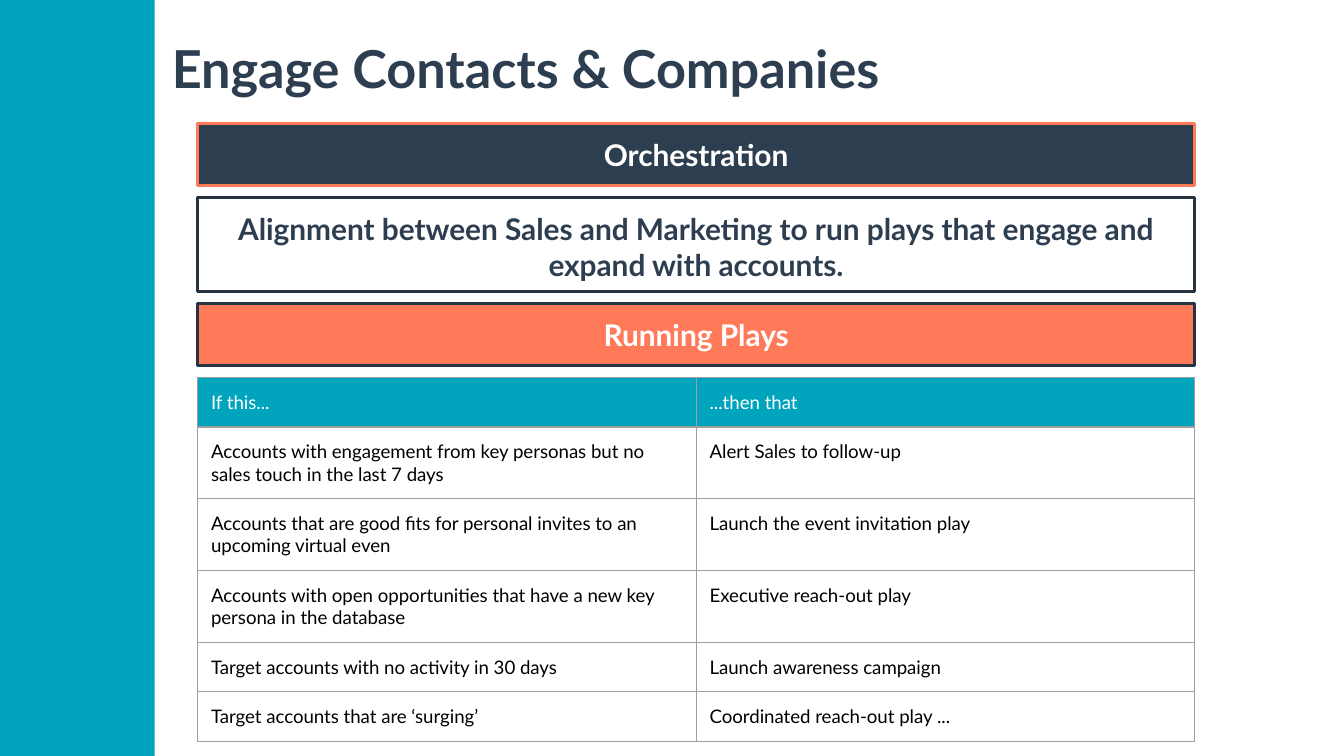
from dataclasses import dataclass

from lxml import etree
from pptx import Presentation
from pptx import util as u
from pptx.dml.color import RGBColor
from pptx.enum import shapes, text
from pptx.oxml import ns


@dataclass(frozen=True)
class Theme:
    font: str = "Lato"
    teal: str = "00A4BD"
    navy: str = "2D3E50"
    outline: str = "253342"
    coral: str = "FF7A59"
    white: str = "FFFFFF"
    black: str = "000000"
    grid: str = "9E9E9E"
    title_size: float = 28
    banner_size: float = 16
    table_size: float = 10
    line: float = 1.5
    grid_line: float = 0.75


THEME = Theme()
WIDTH = 10
HEIGHT = WIDTH * 9 / 16
SIDEBAR = 1.15
LEFT, TOP, CONTENT = 1.47, 0.92, 7.42
GAP, INSET, ROW = 0.09, 0.1, 0.34

# wording, height, fill, outline, text colour
BANNERS = [
    ("Orchestration", 0.46, THEME.navy, THEME.coral, THEME.white),
    ("Alignment between Sales and Marketing to run plays that engage and "
     "expand with accounts.", 0.7, None, THEME.outline, THEME.navy),
    ("Running Plays", 0.46, THEME.coral, THEME.outline, THEME.white),
]
PLAYS = [
    ("If this...", "...then that"),
    ("Accounts with engagement from key personas but no sales touch in the "
     "last 7 days", "Alert Sales to follow-up"),
    ("Accounts that are good fits for personal invites to an upcoming "
     "virtual even", "Launch the event invitation play"),
    ("Accounts with open opportunities that have a new key persona in the "
     "database", "Executive reach-out play"),
    ("Target accounts with no activity in 30 days",
     "Launch awareness campaign"),
    ("Target accounts that are ‘surging’", "Coordinated reach-out play ..."),
]


def inches(box):
    return [u.Inches(length) for length in box]


def set_all(target, values):
    for name, value in values.items():
        setattr(target, name, value)


def set_fill(fill, color):
    if color is None:
        fill.background()
    else:
        fill.solid()
        fill.fore_color.rgb = RGBColor.from_string(color)


def write(holder, words, size, color, bold=False, align=text.PP_ALIGN.LEFT):
    """Fill a shape or a table cell with one formatted paragraph."""
    frame = holder.text_frame
    margins = ("margin_left", "margin_top", "margin_right", "margin_bottom")
    is_shape = hasattr(holder, "has_text_frame")
    set_all(frame if is_shape else holder,
            {**dict.fromkeys(margins, u.Inches(INSET)),
             "vertical_anchor": text.MSO_ANCHOR.TOP})
    frame.word_wrap = True
    para = frame.paragraphs[0]
    para.alignment = align
    span = para.add_run()
    span.text = words
    set_all(span.font, {"name": THEME.font, "size": u.Pt(size), "bold": bold})
    span.font.color.rgb = RGBColor.from_string(color)


def add_rectangle(page, box, fill, line=None):
    shape = page.shapes.add_shape(shapes.MSO_SHAPE.RECTANGLE, *inches(box))
    shape.shadow.inherit = False
    set_fill(shape.fill, fill)
    set_fill(shape.line.fill, line)
    if line:
        shape.line.width = u.Pt(THEME.line)
    return shape


def add_title(page, box, words):
    title = page.shapes.add_textbox(*inches(box))
    write(title, words, THEME.title_size, THEME.navy, bold=True)


def add_banners(page, left, top, width):
    """Stack the banners and return the top of the space below them."""
    for words, height, fill, line, color in BANNERS:
        banner = add_rectangle(page, (left, top, width, height), fill, line)
        write(banner, words, THEME.banner_size, color, bold=True,
              align=text.PP_ALIGN.CENTER)
        top += height + GAP
    return top


def add_borders(cell):
    properties = cell._tc.get_or_add_tcPr()
    for side in ("a:lnL", "a:lnR", "a:lnT", "a:lnB"):
        line = etree.SubElement(properties, ns.qn(side),
                                w=str(u.Pt(THEME.grid_line)))
        fill = etree.SubElement(line, ns.qn("a:solidFill"))
        etree.SubElement(fill, ns.qn("a:srgbClr"), val=THEME.grid)


def add_plays(page, left, top, width):
    box = (left, top, width, ROW * len(PLAYS))
    table = page.shapes.add_table(len(PLAYS), 2, *inches(box)).table
    set_all(table, {"first_row": False, "horz_banding": False})
    for row, wordings in enumerate(PLAYS):
        fill, color = ((None, THEME.black) if row
                       else (THEME.teal, THEME.white))
        for column, words in enumerate(wordings):
            cell = table.cell(row, column)
            add_borders(cell)
            set_fill(cell.fill, fill)
            write(cell, words, THEME.table_size, color)


def main():
    deck = Presentation()
    set_all(deck, {"slide_width": u.Inches(WIDTH),
                   "slide_height": u.Inches(HEIGHT)})
    page = deck.slides.add_slide(deck.slide_layouts[6])
    add_rectangle(page, (0, 0, SIDEBAR, HEIGHT), THEME.teal)
    add_title(page, (1.18, 0.17, 6.87, 0.7), "Engage Contacts & Companies")
    table_top = add_banners(page, LEFT, TOP, CONTENT)
    add_plays(page, LEFT, table_top, CONTENT)
    deck.save("out.pptx")


if __name__ == "__main__":
    main()
